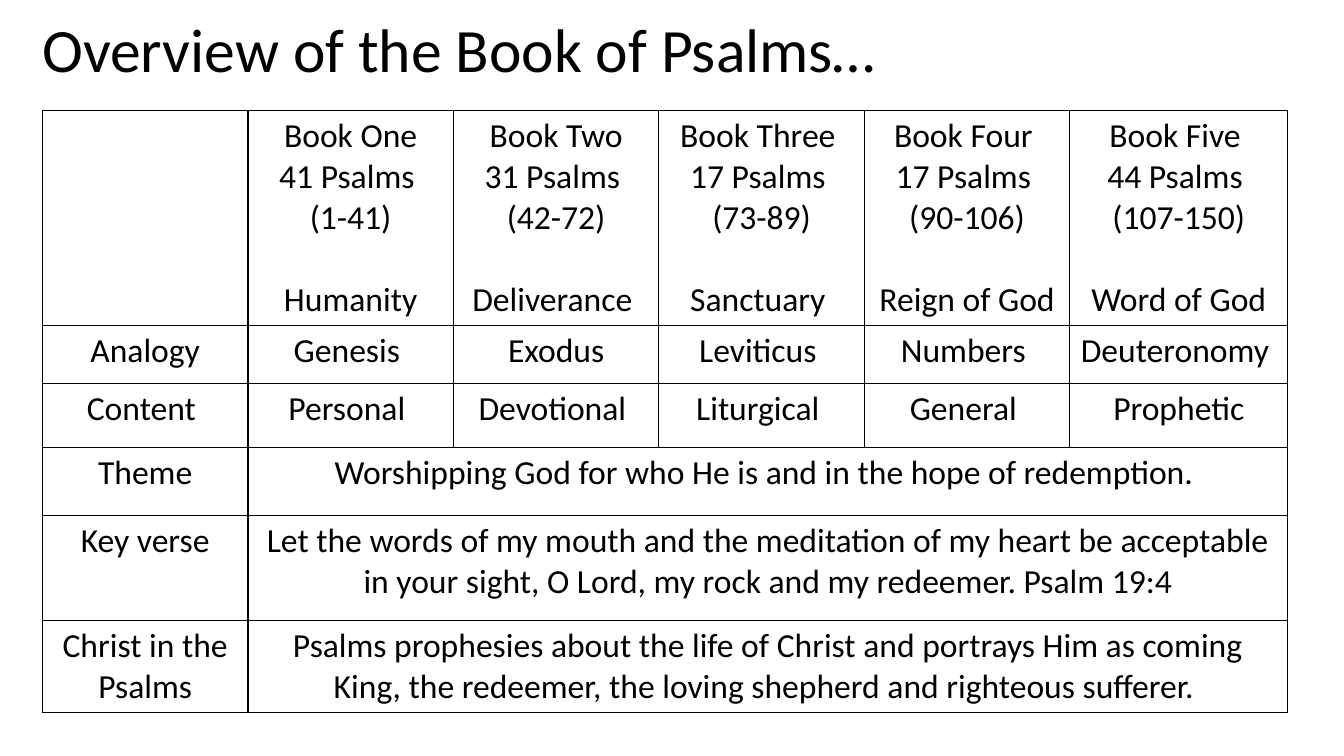
from dataclasses import dataclass

from lxml.etree import SubElement
from pptx import Presentation
from pptx.dml.color import RGBColor
from pptx.enum.text import MSO_ANCHOR as Anchor, MSO_AUTO_SIZE as AutoSize, PP_ALIGN as Align
from pptx.oxml.ns import qn
from pptx.util import Pt


@dataclass(frozen=True)
class Theme:
    font: str = "Calibri"
    ink: str = "000000"
    title_size: int = 44
    body_size: int = 24
    rule_width: int = 1
    section_gap: float = 29.3


TITLE = "Overview of the Book of Psalms…"
BOOKS = [
    ["Book One", "41 Psalms ", "(1-41)", "Humanity"],
    ["Book Two", "31 Psalms ", "(42-72)", "Deliverance "],
    ["Book Three ", "17 Psalms ", "(73-89)", "Sanctuary "],
    ["Book Four ", "17 Psalms ", "(90-106)", "Reign of God"],
    ["Book Five ", "44 Psalms ", "(107-150)", "Word of God"],
]
TOPICS = [
    ["Analogy", "Genesis ", "Exodus", "Leviticus ", "Numbers ", "Deuteronomy "],
    ["Content ", "Personal ", "Devotional ", "Liturgical ", "General ", "Prophetic"],
    ["Theme", "Worshipping God for who He is and in the hope of redemption. "],
    ["Key verse", "Let the words of my mouth and the meditation of my heart be acceptable "
                  "in your sight, O Lord, my rock and my redeemer. Psalm 19:4"],
    ["Christ in the Psalms", "Psalms prophesies about the life of Christ and portrays Him as coming "
                             "King, the redeemer, the loving shepherd and righteous sufferer. "],
]
COLUMN_WIDTHS = [146.8] * 5 + [155.6]
ROW_HEIGHTS = [152, 41, 46.2, 48.2, 75, 62.6]


def apply(target, formats):
    for name, value in formats.items():
        setattr(target, name, value)


class SlideBuilder:
    def __init__(self, slide, theme):
        self.slide = slide
        self.theme = theme

    def add_text(self, para, text, size):
        span = para.add_run()
        span.text = text
        apply(span.font, {"name": self.theme.font, "size": Pt(size), "bold": False})
        span.font.color.rgb = RGBColor.from_string(self.theme.ink)

    def title(self, text, left, top, width, height):
        box = self.slide.shapes.title
        apply(box, {"left": Pt(left), "top": Pt(top), "width": Pt(width), "height": Pt(height)})
        apply(box.text_frame, {"word_wrap": True, "auto_size": AutoSize.NONE,
                               "vertical_anchor": Anchor.MIDDLE})
        para = box.text_frame.paragraphs[0]
        apply(para, {"alignment": Align.LEFT, "line_spacing": 0.9})
        self.add_text(para, text, self.theme.title_size)

    def table(self, left, top, widths, heights):
        frame = self.slide.shapes.add_table(len(heights), len(widths), Pt(left), Pt(top),
                                            Pt(sum(widths)), Pt(sum(heights)))
        table = frame.table
        apply(table, {"first_row": False, "horz_banding": False})
        for column, width in zip(table.columns, widths):
            column.width = Pt(width)
        for row, height in zip(table.rows, heights):
            row.height = Pt(height)
        for cell in table.iter_cells():
            self.borders(cell)
            cell.fill.background()
        return table

    def borders(self, cell):
        properties = cell._tc.get_or_add_tcPr()
        for side in ("a:lnL", "a:lnR", "a:lnT", "a:lnB"):
            line = SubElement(properties, qn(side), w=str(Pt(self.theme.rule_width)))
            fill = SubElement(line, qn("a:solidFill"))
            SubElement(fill, qn("a:srgbClr"), val=self.theme.ink)

    def fill_cell(self, cell, lines):
        frame = cell.text_frame
        for index, text in enumerate(lines):
            para = frame.add_paragraph() if index else frame.paragraphs[0]
            para.alignment = Align.CENTER
            self.add_text(para, text, self.theme.body_size)
        if len(lines) > 1:
            para.space_before = Pt(self.theme.section_gap)


def main():
    deck = Presentation()
    apply(deck, {"slide_width": Pt(960), "slide_height": Pt(540)})
    page = SlideBuilder(deck.slides.add_slide(deck.slide_layouts[5]), Theme())
    page.title(TITLE, 23, 10, 828, 55.5)
    table = page.table(30.3, 79, COLUMN_WIDTHS, ROW_HEIGHTS)
    for column, book in enumerate(BOOKS, 1):
        page.fill_cell(table.cell(0, column), book)
    last = len(COLUMN_WIDTHS) - 1
    for row, topic in enumerate(TOPICS, 1):
        if len(topic) == 2:
            table.cell(row, 1).merge(table.cell(row, last))
        for column, text in enumerate(topic):
            page.fill_cell(table.cell(row, column), [text])
    deck.save("out.pptx")


if __name__ == "__main__":
    main()
